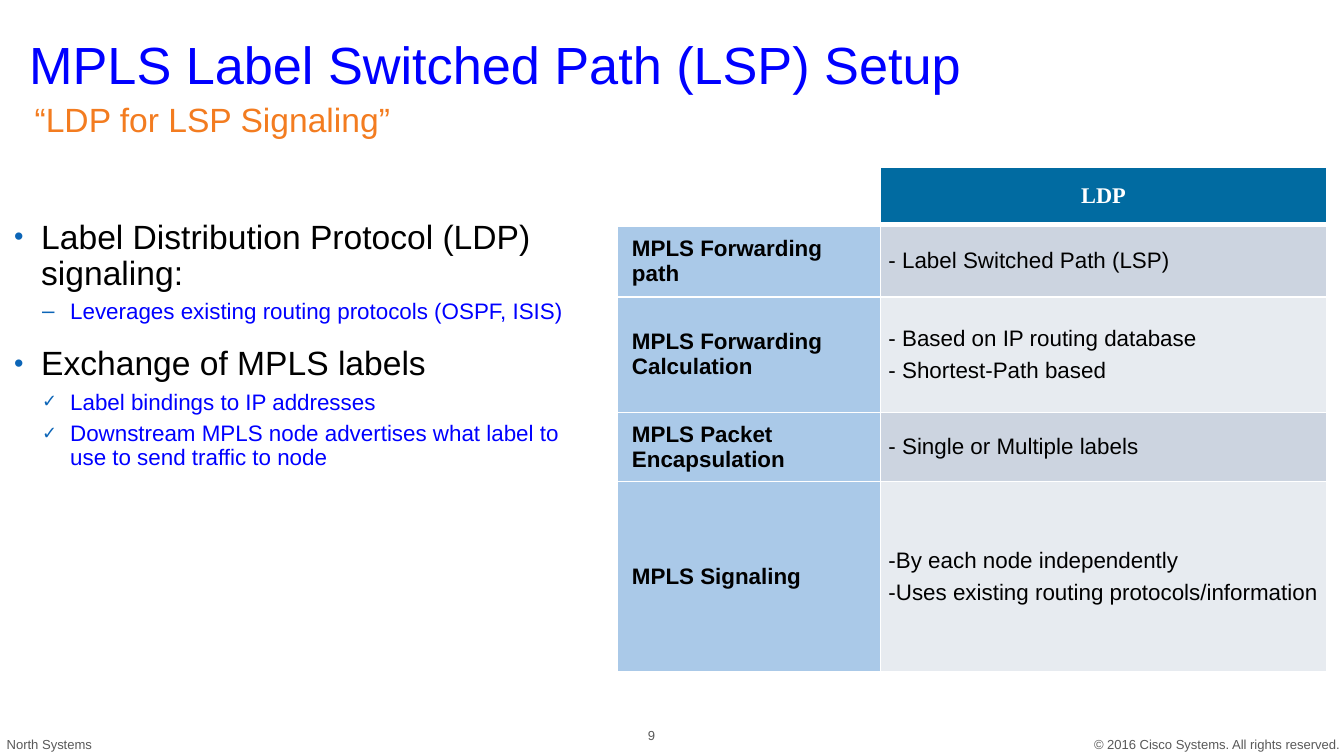
"""Build the slide on label switched path setup with LDP."""
from dataclasses import dataclass
from typing import Optional

import lxml.etree
import pptx
import pptx.dml.color
import pptx.enum.text
import pptx.oxml.ns
import pptx.util

Pt = pptx.util.Pt
RGBColor = pptx.dml.color.RGBColor
Align = pptx.enum.text.PP_ALIGN
Anchor = pptx.enum.text.MSO_ANCHOR

BLUE = RGBColor(0x00, 0x00, 0xFF)
ORANGE = RGBColor(0xF3, 0x7C, 0x20)
BLACK = RGBColor(0x00, 0x00, 0x00)
WHITE = RGBColor(0xFF, 0xFF, 0xFF)
GREY = RGBColor(0x59, 0x59, 0x59)
BULLET_BLUE = RGBColor(0x0C, 0x65, 0xB7)
HEADER_BLUE = RGBColor(0x01, 0x6B, 0xA1)
LABEL_BLUE = RGBColor(0xAA, 0xC9, 0xE8)
BAND_DARK = RGBColor(0xCC, 0xD4, 0xE0)
BAND_LIGHT = RGBColor(0xE7, 0xEB, 0xF0)


@dataclass(frozen=True)
class Style:
    size: float
    color: RGBColor
    font: str = "Arial"
    bold: bool = False


@dataclass(frozen=True)
class Level:
    style: Style
    left: float
    hanging: float
    space_before: float


@dataclass(frozen=True)
class Bullet:
    text: str
    level: Level
    mark: str
    mark_percent: int = 80


@dataclass(frozen=True)
class Label:
    text: str
    left: float
    top: float
    width: float
    height: float
    style: Style
    anchor: Anchor = Anchor.TOP
    align: Align = Align.LEFT
    line_spacing: float = 1.0
    wrap: bool = True
    inset: tuple[float, float] = (7.2, 3.6)


@dataclass(frozen=True)
class Row:
    label: str
    details: tuple[str, ...]
    height: float


FOOTER = Style(7, GREY)
HEADER = Style(12, WHITE, "Times New Roman", True)
ROW_LABEL = Style(12, BLACK, bold=True)
DETAIL = Style(12, BLACK)
TOPIC = Level(Style(18, BLACK), 15, 14.5, 12)
POINT = Level(Style(12, BLUE), 30.5, 15, 4)

LABELS = (
    Label("© 2016 Cisco Systems. All rights reserved.", 582.5, 393, 142, 12, FOOTER,
          Anchor.BOTTOM, wrap=False, inset=(3.6, 2)),
    Label("North Systems", 0, 393, 54, 12, FOOTER, Anchor.BOTTOM, wrap=False, inset=(3.6, 2)),
    Label("MPLS Label Switched Path (LSP) Setup", 8.6, 5.8, 736, 60.5, Style(28, BLUE),
          Anchor.MIDDLE, line_spacing=0.9),
    Label("“LDP for LSP Signaling”", 11.5, 52, 662, 24.5, Style(18, ORANGE), line_spacing=0.9),
    Label("9", 334, 383, 30, 22, FOOTER, Anchor.MIDDLE, Align.CENTER),
)
BULLET_AREA = Label("", 0, 114.5, 327.6, 272, TOPIC.style)
BULLETS = (
    Bullet("Label Distribution Protocol (LDP) signaling:", TOPIC, "•"),
    Bullet("Leverages existing routing protocols (OSPF, ISIS)", POINT, "–", 100),
    Bullet("Exchange of MPLS labels", TOPIC, "•"),
    Bullet("Label bindings to IP addresses", POINT, "✓"),
    Bullet("Downstream MPLS node advertises what label to use to send traffic to node", POINT, "✓"),
)
HEADER_HEIGHT = 31
COLUMN_WIDTHS = (141, 239)
ROWS = (
    Row("MPLS Forwarding path", ("- Label Switched Path (LSP)",), 38.5),
    Row("MPLS Forwarding Calculation",
        ("- Based on IP routing database", "- Shortest-Path based"), 62),
    Row("MPLS Packet Encapsulation", ("- Single or Multiple labels",), 37),
    Row("MPLS Signaling",
        ("-By each node independently", "-Uses existing routing protocols/information"), 102),
)


def add_run(paragraph, text: str, style: Style) -> None:
    run = paragraph.add_run()
    run.text = text
    run.font.size = Pt(style.size)
    run.font.name = style.font
    run.font.bold = style.bold
    run.font.color.rgb = style.color


def add_child(parent, tag: str, **attributes: str):
    return lxml.etree.SubElement(parent, pptx.oxml.ns.qn(tag), attributes)


def next_paragraph(frame, index: int):
    return frame.add_paragraph() if index else frame.paragraphs[0]


def add_frame(slide, label: Label):
    shape = slide.shapes.add_textbox(
        Pt(label.left), Pt(label.top), Pt(label.width), Pt(label.height))
    frame = shape.text_frame
    frame.word_wrap = label.wrap
    frame.vertical_anchor = label.anchor
    frame.margin_left = frame.margin_right = Pt(label.inset[0])
    frame.margin_top = frame.margin_bottom = Pt(label.inset[1])
    return frame


def add_label(slide, label: Label) -> None:
    paragraph = add_frame(slide, label).paragraphs[0]
    paragraph.alignment = label.align
    paragraph.line_spacing = label.line_spacing
    add_run(paragraph, label.text, label.style)


def add_bullets(slide, area: Label, bullets: tuple[Bullet, ...]) -> None:
    frame = add_frame(slide, area)
    for index, bullet in enumerate(bullets):
        paragraph = next_paragraph(frame, index)
        level = bullet.level
        properties = paragraph._p.get_or_add_pPr()
        properties.set("marL", str(Pt(level.left)))
        properties.set("indent", str(-Pt(level.hanging)))
        add_child(add_child(properties, "a:buClr"), "a:srgbClr", val=str(BULLET_BLUE))
        add_child(properties, "a:buSzPct", val=str(bullet.mark_percent * 1000))
        add_child(properties, "a:buFont", typeface="Arial")
        add_child(properties, "a:buChar", char=bullet.mark)
        paragraph.level = int(level is POINT)
        paragraph.line_spacing = 0.9
        paragraph.space_before = Pt(level.space_before if index else 0)
        add_run(paragraph, bullet.text, level.style)


def fill_cell(cell, lines: tuple[str, ...], style: Style, fill: Optional[RGBColor],
              left_inset: float = 4.3, align: Align = Align.LEFT, bottom_line: float = 1) -> None:
    cell.vertical_anchor = Anchor.MIDDLE
    cell.margin_left, cell.margin_right = Pt(left_inset), Pt(4.3)
    cell.margin_top = cell.margin_bottom = Pt(2.2)
    for index, line in enumerate(lines):
        paragraph = next_paragraph(cell.text_frame, index)
        paragraph.alignment = align
        paragraph.space_before = Pt(4 if index else 0)
        add_run(paragraph, line, style)
    properties = cell._tc.get_or_add_tcPr()
    for side, width in (("L", 1), ("R", 1), ("T", 1), ("B", bottom_line)):
        border = add_child(properties, f"a:ln{side}", w=str(Pt(width)))
        add_child(add_child(border, "a:solidFill"), "a:srgbClr", val=str(WHITE))
    if fill is None:
        cell.fill.background()
    else:
        cell.fill.solid()
        cell.fill.fore_color.rgb = fill


def add_comparison(slide, rows: tuple[Row, ...]) -> None:
    heights = [HEADER_HEIGHT, *(row.height for row in rows)]
    table = slide.shapes.add_table(
        len(heights), len(COLUMN_WIDTHS), Pt(330.7), Pt(89.5),
        Pt(sum(COLUMN_WIDTHS)), Pt(sum(heights))).table
    table.first_row = table.horz_banding = False
    for column, width in zip(table.columns, COLUMN_WIDTHS):
        column.width = Pt(width)
    for table_row, height in zip(table.rows, heights):
        table_row.height = Pt(height)
    fill_cell(table.cell(0, 0), (), HEADER, None, bottom_line=3)
    fill_cell(table.cell(0, 1), ("LDP",), HEADER, HEADER_BLUE, align=Align.CENTER, bottom_line=3)
    for index, row in enumerate(rows, start=1):
        band = BAND_DARK if index % 2 else BAND_LIGHT
        fill_cell(table.cell(index, 0), (row.label,), ROW_LABEL, LABEL_BLUE, left_inset=7.9)
        fill_cell(table.cell(index, 1), row.details, DETAIL, band)


def main() -> None:
    presentation = pptx.Presentation()
    presentation.slide_width, presentation.slide_height = Pt(720), Pt(405)
    slide = presentation.slides.add_slide(presentation.slide_layouts[6])
    for label in LABELS:
        add_label(slide, label)
    add_bullets(slide, BULLET_AREA, BULLETS)
    add_comparison(slide, ROWS)
    presentation.save("out.pptx")


if __name__ == "__main__":
    main()
